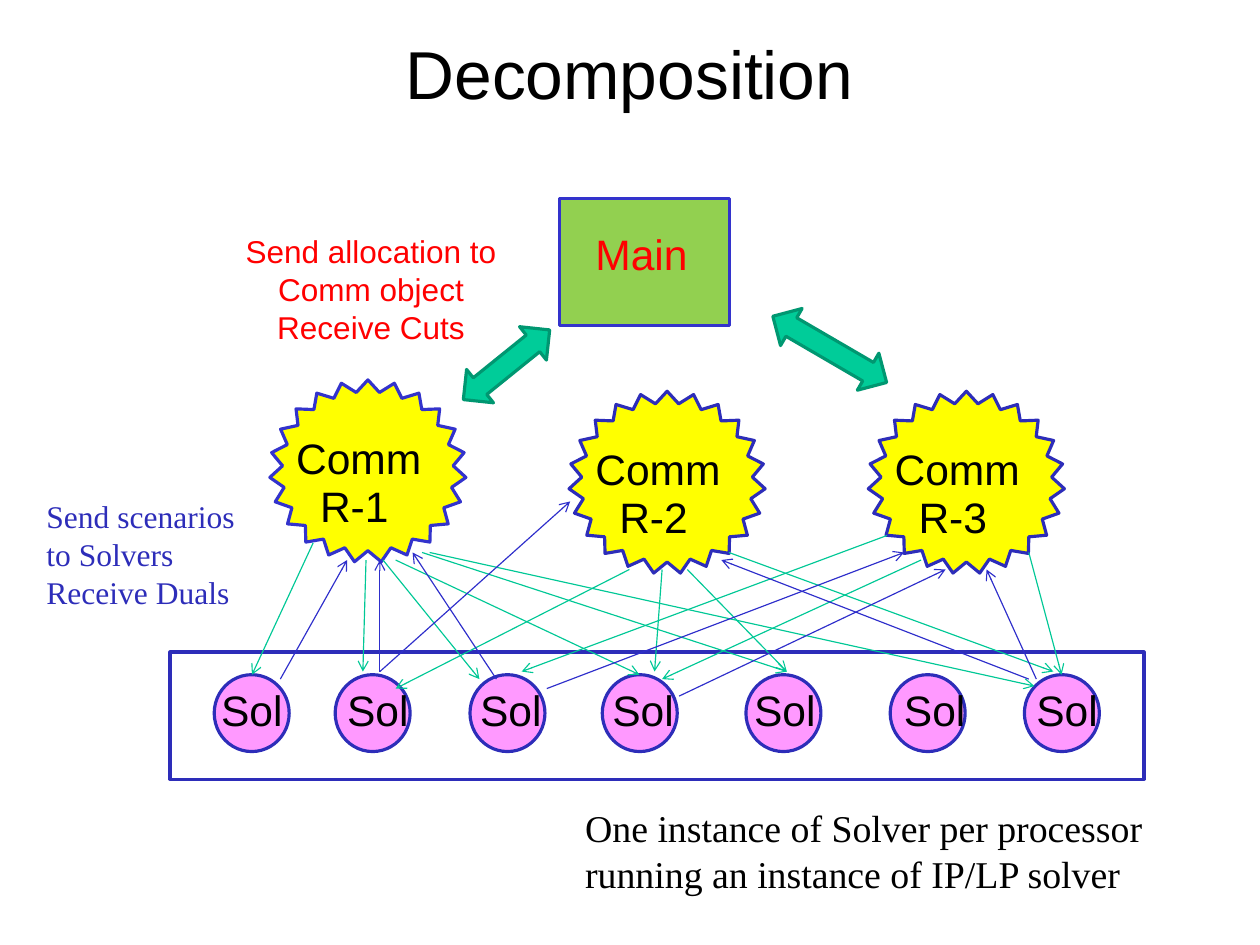
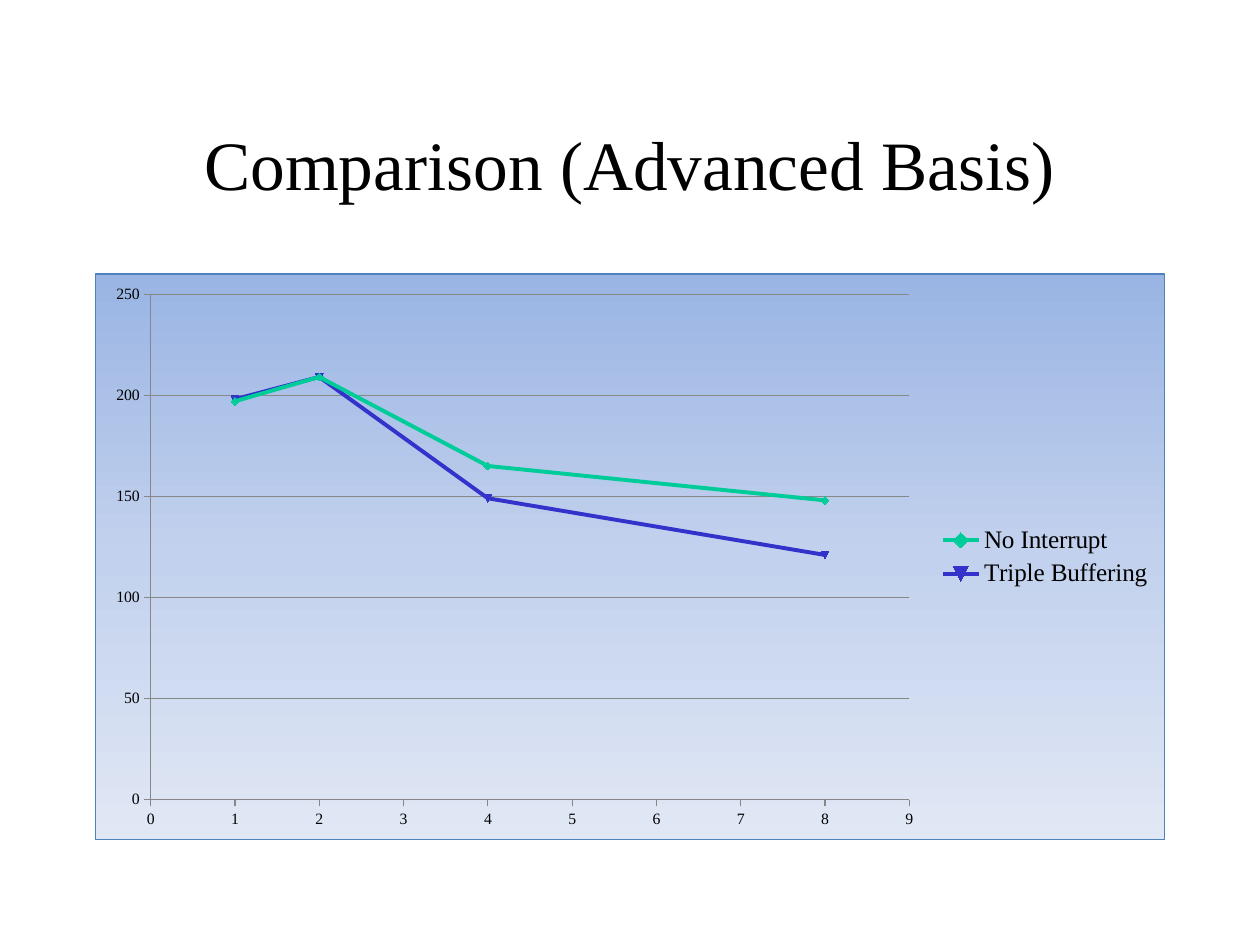
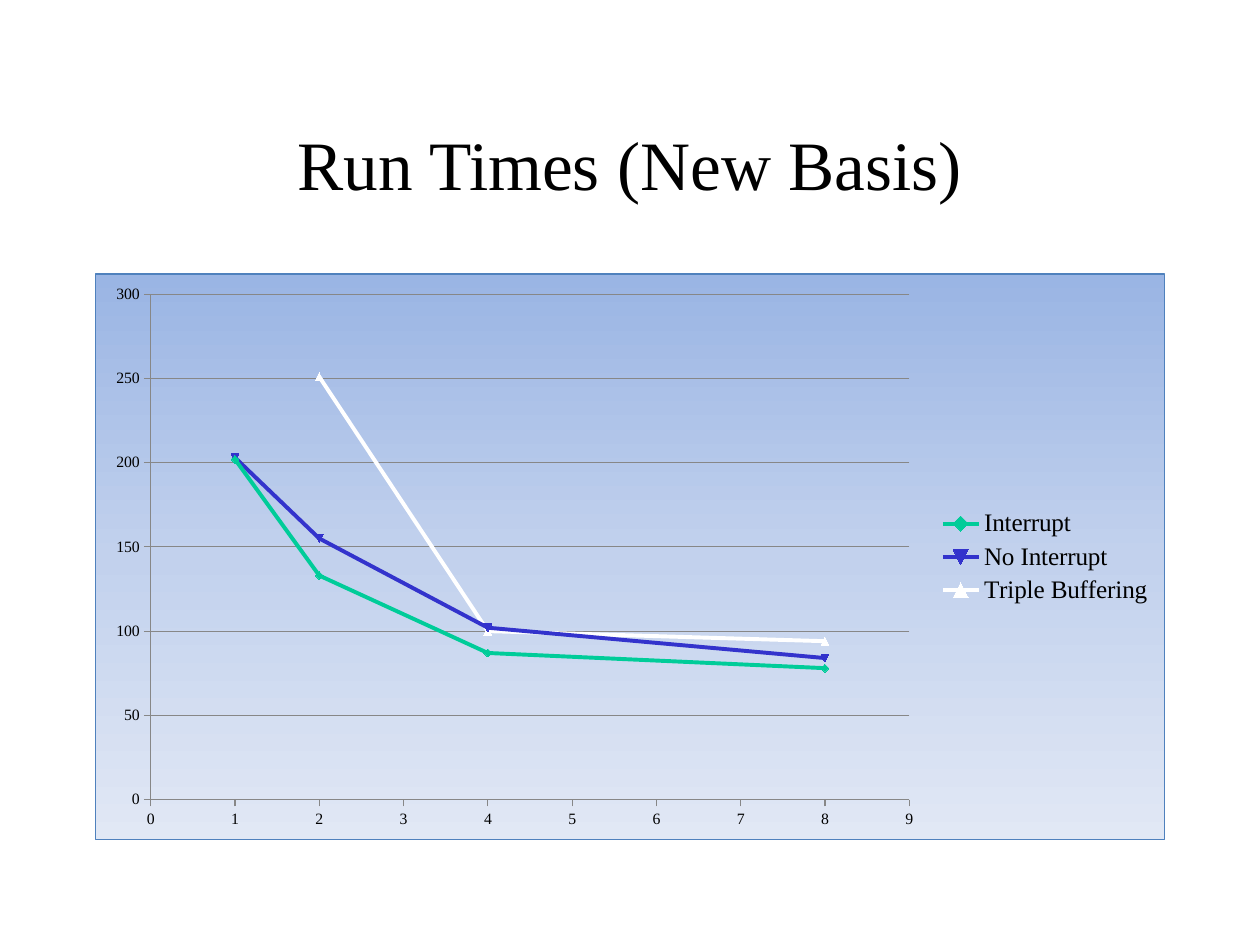
from math import cos, pi, sin

from lxml import etree
from pptx import Presentation
from pptx.chart.data import XyChartData
from pptx.dml.color import RGBColor
from pptx.enum.chart import XL_CHART_TYPE, XL_LEGEND_POSITION, XL_TICK_MARK
from pptx.enum.shapes import MSO_CONNECTOR, MSO_SHAPE
from pptx.enum.text import MSO_ANCHOR, PP_ALIGN
from pptx.oxml import parse_xml
from pptx.oxml.ns import nsdecls, qn
from pptx.util import Inches, Pt

LEFT, CENTER = PP_ALIGN.LEFT, PP_ALIGN.CENTER
TOP, MIDDLE = MSO_ANCHOR.TOP, MSO_ANCHOR.MIDDLE
RECT, OVAL = MSO_SHAPE.RECTANGLE, MSO_SHAPE.OVAL
UP_DOWN_ARROW = MSO_SHAPE.UP_DOWN_ARROW
STRAIGHT = MSO_CONNECTOR.STRAIGHT
SMOOTH_SCATTER = XL_CHART_TYPE.XY_SCATTER_SMOOTH
LEGEND_RIGHT = XL_LEGEND_POSITION.RIGHT
TICK_OUT = XL_TICK_MARK.OUTSIDE

BLACK = RGBColor(0x00, 0x00, 0x00)
WHITE = RGBColor(0xFF, 0xFF, 0xFF)
RED = RGBColor(0xFF, 0x00, 0x00)
YELLOW = RGBColor(0xFF, 0xFF, 0x00)
LIME = RGBColor(0x92, 0xD0, 0x50)
PINK = RGBColor(0xFF, 0x99, 0xFF)
GREEN = RGBColor(0x00, 0xCC, 0x99)
DARK_GREEN = RGBColor(0x00, 0x97, 0x71)
LINK_GREEN = RGBColor(0x00, 0xC8, 0x96)
BLUE = RGBColor(0x33, 0x33, 0xCC)
DARK_BLUE = RGBColor(0x2D, 0x2D, 0xB9)
LINK_BLUE = RGBColor(0x2E, 0x2E, 0xCB)
GREY = RGBColor(0x87, 0x87, 0x87)
CHART_BORDER = RGBColor(0x4F, 0x81, 0xBD)
CHART_STOPS = (
    (0, RGBColor(0x9A, 0xB5, 0xE4)),
    (50, RGBColor(0xC2, 0xD1, 0xED)),
    (100, RGBColor(0xE1, 0xE8, 0xF5)),
)
SERIES_COLORS = (GREEN, BLUE, WHITE)

SANS, SERIF = "Arial", "Times New Roman"
COLS, ROWS = 100, 75
CELL = Inches(1) / 9
SEAL_TIPS = 23

# Left edges of each solver's circle and label
SOLVERS = ((17, 17.55), (26.6, 27.55), (37.3, 38.1), (47.8, 48.6),
           (59.2, 59.85), (70.65, 71.75), (81.3, 82.25))

# Start column and row, end column and row
SCENARIO_LINKS = (
    (24.85, 43.1, 20, 53.55), (29.05, 44.45, 28.8, 53.3),
    (30.4, 44.45, 38.05, 53.9), (31.4, 44.45, 50.75, 53.55),
    (33.5, 43.85, 62.45, 53.3), (52.55, 45.2, 51.95, 53.3),
    (34.1, 43.85, 82.1, 54.45), (49.95, 45.2, 31.4, 54.65),
    (54.55, 45.2, 62.45, 53.3), (57.85, 43.85, 83.6, 53.3),
    (73.1, 44.45, 52.55, 53.9), (81.65, 43.85, 84.25, 53.55),
    (70.4, 42.5, 41.4, 53.3),
)
DUAL_LINKS = (
    (22.25, 53.9, 27.55, 44.45), (43.4, 54.65, 71.75, 43.85),
    (30.15, 53.3, 45.25, 39.8), (30.15, 53.3, 30.15, 44.45),
    (39.4, 53.9, 32.75, 43.85), (53.9, 55.25, 75.05, 45.2),
    (82.25, 53.9, 78.3, 45.2), (81.65, 53.9, 57.25, 44.45),
)


def cells(*lengths):
    """Turn grid lengths into EMU."""
    return [round(n * CELL) for n in lengths]


class Deck:
    def __init__(self):
        self.prs = Presentation()
        self.prs.slide_width, self.prs.slide_height = cells(COLS, ROWS)
        self.slide = None

    def new_slide(self):
        self.slide = self.prs.slides.add_slide(self.prs.slide_layouts[6])

    def text(self, box, lines, size, font=SANS, color=BLACK, align=LEFT,
             anchor=TOP, spacing=None, inset=True, indent=0):
        """Add one paragraph per line; indent applies after the first."""
        tf = self.slide.shapes.add_textbox(*cells(*box)).text_frame
        tf.word_wrap = True
        tf.vertical_anchor = anchor
        if not inset:
            tf.margin_left = tf.margin_right = 0
            tf.margin_top = tf.margin_bottom = 0
        for i, line in enumerate(lines):
            p = tf.add_paragraph() if i else tf.paragraphs[0]
            if i and indent:
                p._p.get_or_add_pPr().set("marL", str(cells(indent)[0]))
            p.text = line
            p.alignment = align
            if spacing:
                p.line_spacing = spacing
            p.font.size = Pt(size)
            p.font.name = font
            p.font.color.rgb = color

    def label(self, box, *lines, color=BLACK, indent=0):
        self.text(box, lines, 27, color=color, spacing=0.95, inset=False,
                  indent=indent)

    def paint(self, sp, fill, line):
        sp.shadow.inherit = False
        sp.fill.solid()
        sp.fill.fore_color.rgb = fill
        sp.line.color.rgb = line
        sp.line.width = Pt(2)

    def shape(self, kind, box, fill, line, rotation=0):
        sp = self.slide.shapes.add_shape(kind, *cells(*box))
        sp.rotation = rotation
        self.paint(sp, fill, line)

    def seal(self, cx, cy, line):
        """Draw a star with its first tip at the top."""
        points = []
        for i in range(2 * SEAL_TIPS):
            k = 0.87 if i % 2 else 1
            angle = pi * i / SEAL_TIPS
            points.append(cells(cx + 7.8 * k * sin(angle),
                                cy - 7.25 * k * cos(angle)))
        builder = self.slide.shapes.build_freeform(*points[0])
        builder.add_line_segments(points[1:], close=True)
        self.paint(builder.convert_to_shape(), YELLOW, line)

    def arrow(self, ends, color):
        cxn = self.slide.shapes.add_connector(STRAIGHT, *cells(*ends))
        cxn.line.color.rgb = color
        cxn.line.width = Pt(0.75)
        ln = cxn.line._get_or_add_ln()
        etree.SubElement(ln, qn("a:tailEnd"), type="arrow")
        etree.SubElement(cxn._element.spPr, qn("a:effectLst"))

    def chart(self, box, series, y_max):
        data = XyChartData()
        for name, points in series:
            s = data.add_series(name)
            for x, y in points:
                s.add_data_point(x, y)
        chart = self.slide.shapes.add_chart(
            SMOOTH_SCATTER, *cells(*box), data).chart
        chart.has_title = False
        chart.font.size = Pt(10)
        chart.font.name = SERIF
        chart.font.color.rgb = BLACK
        chart.has_legend = True
        chart.legend.position = LEGEND_RIGHT
        chart.legend.include_in_layout = False
        chart.legend.font.size = Pt(16)
        chart.legend.font.name = SERIF
        for axis, top, step in ((chart.category_axis, 9, 1),
                                (chart.value_axis, y_max, 50)):
            axis.minimum_scale, axis.maximum_scale = 0, top
            axis.major_unit = step
            axis.major_tick_mark = TICK_OUT
            axis.format.line.color.rgb = GREY
        chart.category_axis.has_major_gridlines = False
        chart.value_axis.has_major_gridlines = True
        chart.value_axis.major_gridlines.format.line.color.rgb = GREY
        chart.plots[0].vary_by_categories = False
        for s, color in zip(chart.plots[0].series, SERIES_COLORS):
            s.smooth = True
            s.format.line.color.rgb = color
            s.format.line.width = Pt(2.5)
        self.chart_background(chart)

    def chart_background(self, chart):
        stops = "".join(
            f'<a:gs pos="{pos * 1000}"><a:srgbClr val="{color}"/></a:gs>'
            for pos, color in CHART_STOPS)
        fill = parse_xml(
            f'<c:spPr {nsdecls("c", "a")}>'
            f'<a:gradFill><a:gsLst>{stops}</a:gsLst>'
            f'<a:lin ang="5400000" scaled="0"/></a:gradFill>'
            f'<a:ln w="{Pt(0.75)}"><a:solidFill>'
            f'<a:srgbClr val="{CHART_BORDER}"/></a:solidFill></a:ln>'
            f'</c:spPr>')
        chart.element.find(qn("c:chart")).addnext(fill)

    def chart_slide(self, title, series, y_max):
        self.new_slide()
        self.text((7.5, 6.65, 85, 12.5), [title], 44, SERIF,
                  align=CENTER, anchor=MIDDLE)
        self.chart((7.5, 21.7, 85, 45), series, y_max)


def decomposition(deck):
    deck.new_slide()
    deck.text((2.4, 3, 95.1, 9), ["Decomposition"], 43, align=CENTER,
              spacing=0.95, inset=False)
    deck.shape(RECT, (44.4, 15.75, 13.5, 10.1), LIME, BLUE)
    deck.label((47.25, 18.4, 10.35, 3.5), "Main", color=RED)

    deck.shape(RECT, (13.5, 51.75, 77.3, 10.1), WHITE, DARK_BLUE)
    for circle_x, label_x in SOLVERS:
        deck.shape(OVAL, (circle_x, 53.55, 5.95, 6.1), PINK, DARK_BLUE)
        deck.label((label_x, 54.6, 5.5, 4.7), "Sol")

    seals = ((37.4, BLUE), (38.3, DARK_BLUE), (38.3, DARK_BLUE))
    for i, (cy, line) in enumerate(seals):
        cx = 29.2 + 23.75 * i
        deck.seal(cx, cy, line)
        deck.label((cx - 5.7, cy - 2.85, 10.25, 6.9), "Comm", f"R-{i + 1}",
                   indent=1.9)

    deck.text((45.55, 63.45, 48, 8.2),
              ["One instance of Solver per processor "
               "running an instance of IP/LP solver"], 24, SERIF)
    for links, color in ((SCENARIO_LINKS, LINK_GREEN),
                         (DUAL_LINKS, LINK_BLUE)):
        for ends in links:
            deck.arrow(ends, color)
    deck.text((2.8, 39, 18.45, 10),
              ["Send scenarios to Solvers", "Receive Duals"],
              20, SERIF, DARK_BLUE)
    deck.text((18.55, 18, 21.8, 10),
              ["Send allocation to Comm object", "Receive Cuts"],
              20, color=RED, align=CENTER)
    for box, rotation in (((38.5, 24.55, 3.4, 8.8), 51.1),
                          ((64.15, 22.5, 3.4, 10.45), 300.2)):
        deck.shape(UP_DOWN_ARROW, box, GREEN, DARK_GREEN, rotation)


def main():
    deck = Deck()
    decomposition(deck)
    deck.chart_slide("Comparison (Advanced Basis)", (
        ("No Interrupt", ((1, 197), (2, 209), (4, 165), (8, 148))),
        ("Triple Buffering", ((1, 198), (2, 209), (4, 149), (8, 121))),
    ), 250)
    deck.chart_slide("Run Times (New Basis)", (
        ("Interrupt", ((1, 202), (2, 133), (4, 87), (8, 78))),
        ("No Interrupt", ((1, 203), (2, 155), (4, 102), (8, 84))),
        ("Triple Buffering", ((2, 251), (4, 100), (8, 94))),
    ), 300)
    deck.prs.save("out.pptx")


if __name__ == "__main__":
    main()
